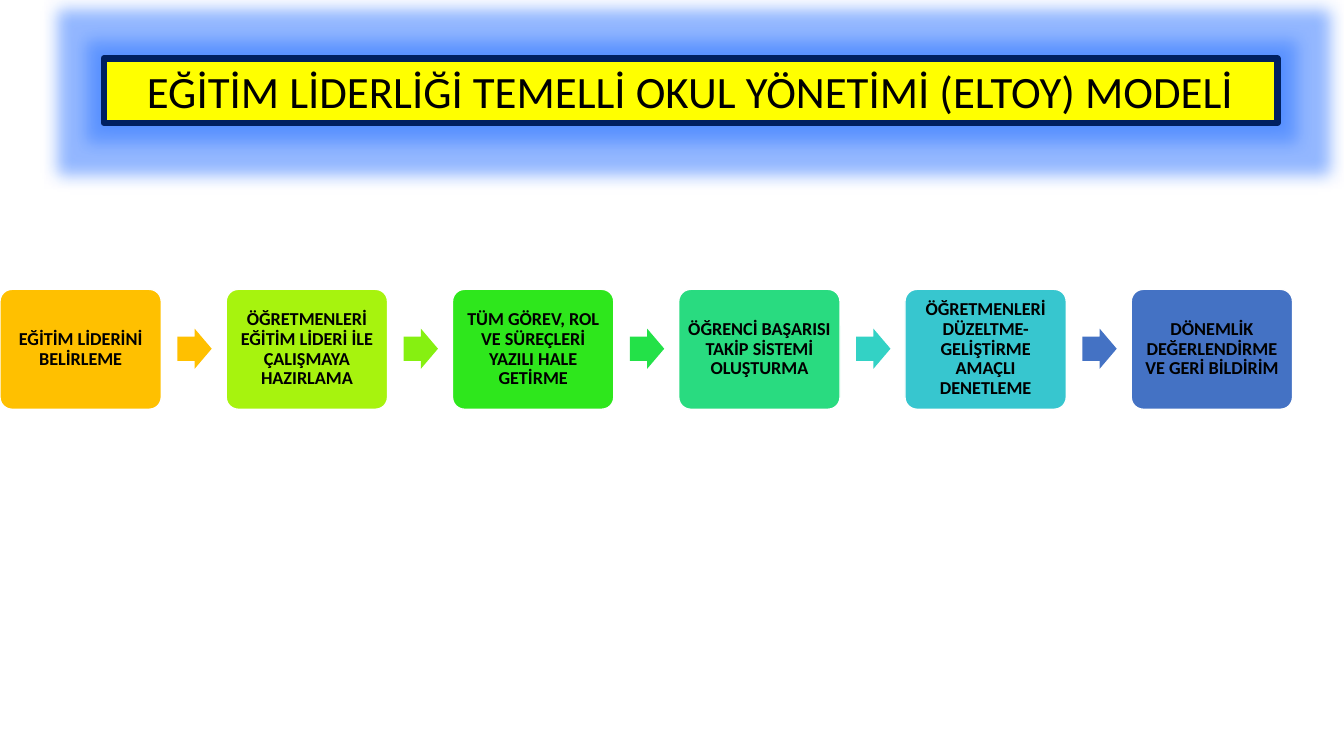
from lxml.etree import SubElement
from pptx import Presentation
from pptx.dml.color import RGBColor
from pptx.enum.shapes import MSO_SHAPE
from pptx.enum.text import MSO_ANCHOR, PP_ALIGN
from pptx.oxml import parse_xml
from pptx.util import Inches, Pt

STEPS = [
    ("EĞİTİM LİDERİNİ BELİRLEME", "FFC000"),
    ("ÖĞRETMENLERİ EĞİTİM LİDERİ İLE ÇALIŞMAYA HAZIRLAMA", "A7F30E"),
    ("TÜM GÖREV, ROL VE SÜREÇLERİ YAZILI HALE GETİRME", "2EE71C"),
    ("ÖĞRENCİ BAŞARISI TAKİP SİSTEMİ OLUŞTURMA", "29DB80"),
    ("ÖĞRETMENLERİ DÜZELTME-GELİŞTİRME AMAÇLI DENETLEME", "37C6CF"),
    ("DÖNEMLİK DEĞERLENDİRME VE GERİ BİLDİRİM", "4472C4"),
]
ARROW_FILLS = ["FFC000", "86F011", "23E148", "33D2C5", "4472C4"]
STEP_PITCH = 11.22 / (len(STEPS) - 1)

presentation = Presentation()
presentation.slide_width = Inches(13.33)
presentation.slide_height = Inches(7.5)
slide = presentation.slides.add_slide(presentation.slide_layouts[6])


def add_block(kind, left, top, width, height, fill, line=None, line_width=1):
    block = slide.shapes.add_shape(
        kind, Inches(left), Inches(top), Inches(width), Inches(height))
    block.shadow.inherit = False
    block.fill.solid()
    block.fill.fore_color.rgb = RGBColor.from_string(fill)
    if line:
        block.line.color.rgb = RGBColor.from_string(line)
        block.line.width = Pt(line_width)
    else:
        block.line.fill.background()
    return block


def write(block, text, size, bold=False, spacing=1.0, inset=0.05,
          anchor=MSO_ANCHOR.MIDDLE):
    frame = block.text_frame
    frame.word_wrap = True
    frame.vertical_anchor = anchor
    frame.margin_left = frame.margin_right = Inches(inset)
    frame.margin_top = frame.margin_bottom = Inches(0.05)
    paragraph = frame.paragraphs[0]
    paragraph.alignment = PP_ALIGN.CENTER
    paragraph.line_spacing = spacing
    run = paragraph.add_run()
    run.text = text
    run.font.name = "Calibri"
    run.font.size = Pt(size)
    run.font.bold = bold
    run.font.color.rgb = RGBColor.from_string("000000")


title = add_block(MSO_SHAPE.RECTANGLE, 1.03, 0.58, 11.64, 0.64,
                  "FFFF00", line="002060", line_width=4.5)
write(title, "EĞİTİM LİDERLİĞİ TEMELLİ OKUL YÖNETİMİ (ELTOY) MODELİ", 32,
      inset=0.1, anchor=MSO_ANCHOR.TOP)

# Blue halo: a wide glow with a tighter, denser one inside it
drawing = "http://schemas.openxmlformats.org/drawingml/2006/main"
properties = title.element.spPr
properties.remove(properties.find(f"{{{drawing}}}effectLst"))
halo = parse_xml(f'<a:effectLst xmlns:a="{drawing}"/>')
properties.append(halo)
for effect, radius_name, radius in [("glow", "rad", 0.32),
                                    ("outerShdw", "blurRad", 0.14)]:
    layer = SubElement(halo, f"{{{drawing}}}{effect}",
                       {radius_name: str(Inches(radius))})
    color = SubElement(layer, f"{{{drawing}}}srgbClr", val="2E75FF")
    SubElement(color, f"{{{drawing}}}alpha", val="45000")

for index, (label, fill) in enumerate(STEPS):
    left = index * STEP_PITCH
    step = add_block(MSO_SHAPE.ROUNDED_RECTANGLE, left, 2.87, 1.6, 1.19,
                     fill, line="FFFFFF")
    step.adjustments[0] = 0.1
    write(step, label, 13, bold=True, spacing=0.9)
    if index < len(ARROW_FILLS):
        arrow = add_block(MSO_SHAPE.RIGHT_ARROW, left + 1.76, 3.26, 0.34, 0.4,
                          ARROW_FILLS[index])
        arrow.adjustments[0] = 0.6
        arrow.adjustments[1] = 0.5

presentation.save("out.pptx")
